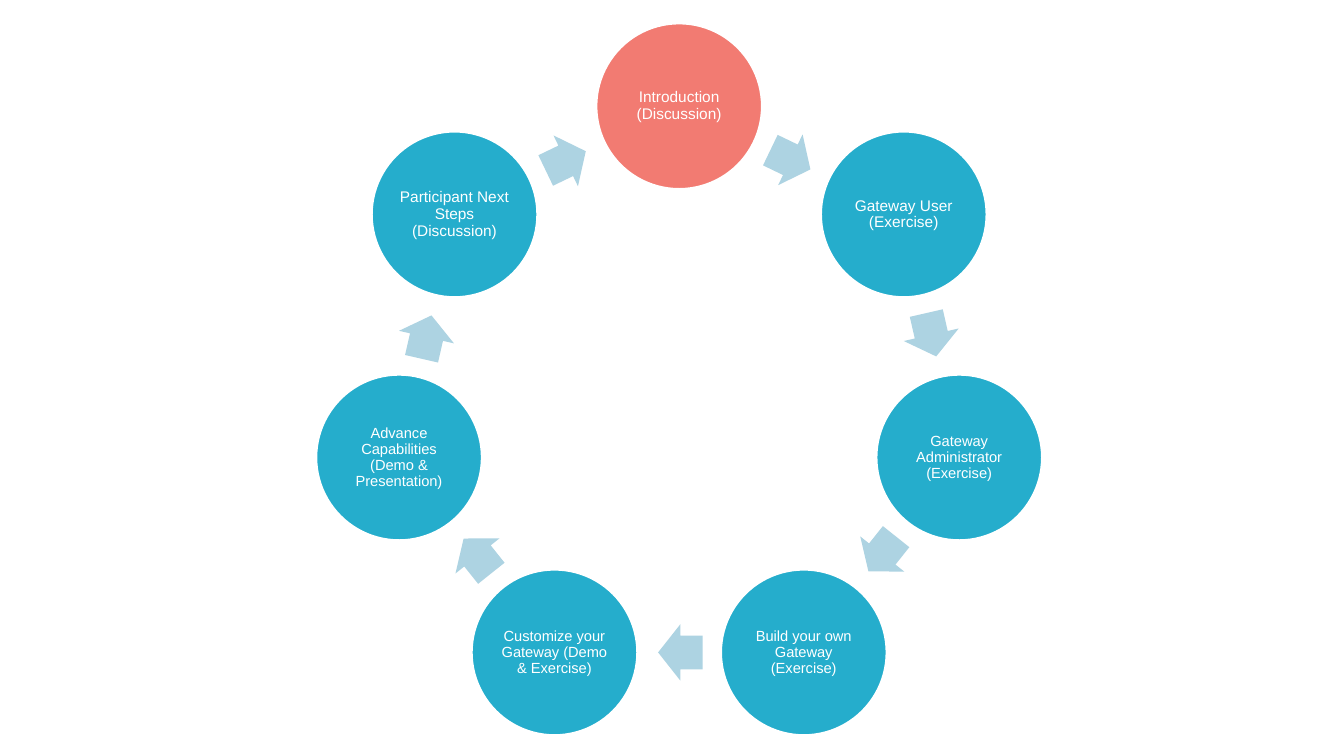
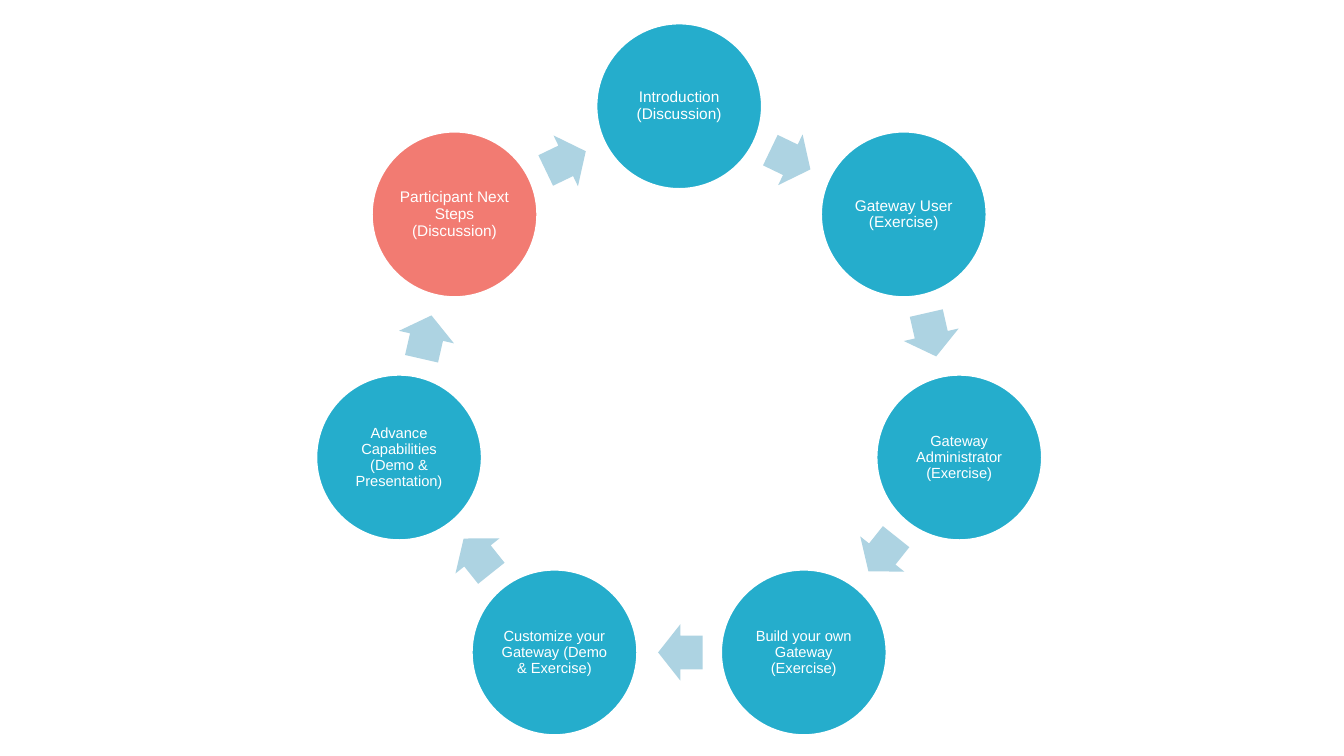
import math

from pptx import Presentation
from pptx import util as u
from pptx.dml.color import RGBColor
from pptx.enum import shapes, text

COLORS = {
    "current": "F27B72",
    "step": "25ADCC",
    "arrow": "ADD3E2",
    "white": "FFFFFF",
}
FONT = "Arial"
STEPS = [
    ("Introduction (Discussion)", 11),
    ("Gateway User (Exercise)", 11),
    ("Gateway Administrator (Exercise)", 10.5),
    ("Build your own Gateway (Exercise)", 10.5),
    ("Customize your Gateway (Demo & Exercise)", 10.5),
    ("Advance Capabilities (Demo & Presentation)", 10.5),
    ("Participant Next Steps (Discussion)", 11),
]
CYCLE_BOX = (7.96, 0.58, 18.31)  # left, top, width in cm
CIRCLE_SHARE = 0.229  # circle diameter as a share of the cycle's width
ARROW_SIZE = (1.12, 1.42)
ARROW_SETBACK = 0.03


def color(name):
    return RGBColor.from_string(COLORS[name])


def add_centered_shape(container, kind, center, size, fill):
    (x, y), (width, height) = center, size
    shape = container.shapes.add_shape(
        kind, u.Cm(x - width / 2), u.Cm(y - height / 2), u.Cm(width), u.Cm(height))
    shape.shadow.inherit = False
    shape.fill.solid()
    shape.fill.fore_color.rgb = color(fill)
    return shape


def add_step(container, center, diameter, label, size, fill):
    circle = add_centered_shape(
        container, shapes.MSO_SHAPE.OVAL, center, (diameter, diameter), fill)
    circle.line.color.rgb = color("white")
    circle.line.width = u.Pt(2)
    frame = circle.text_frame
    frame.word_wrap = True
    frame.vertical_anchor = text.MSO_ANCHOR.MIDDLE
    frame.margin_left = frame.margin_right = u.Cm(0.05)
    frame.margin_top = frame.margin_bottom = u.Cm(0.05)
    paragraph = frame.paragraphs[0]
    paragraph.alignment = text.PP_ALIGN.CENTER
    paragraph.line_spacing = 0.9
    run = paragraph.add_run()
    run.text = label
    run.font.name = FONT
    run.font.size = u.Pt(size)
    run.font.color.rgb = color("white")


def add_arrow(container, start, end):
    """Place an arrow halfway between two circle centers, set back slightly."""
    angle = math.atan2(end[1] - start[1], end[0] - start[0])
    center = ((start[0] + end[0]) / 2 - ARROW_SETBACK * math.cos(angle),
              (start[1] + end[1]) / 2 - ARROW_SETBACK * math.sin(angle))
    arrow = add_centered_shape(
        container, shapes.MSO_SHAPE.RIGHT_ARROW, center, ARROW_SIZE, "arrow")
    arrow.line.fill.background()
    arrow.adjustments[0] = 0.6
    arrow.adjustments[1] = 0.5
    arrow.rotation = math.degrees(angle) % 360


def add_cycle(slide, box, current):
    """Draw the steps clockwise from the top, with one step highlighted."""
    left, top, width = box
    diameter = width * CIRCLE_SHARE
    angles = [2 * math.pi * index / len(STEPS) for index in range(len(STEPS))]
    radius = (width - diameter) / 2 / max(math.sin(angle) for angle in angles)
    middle_x, middle_y = left + width / 2, top + diameter / 2 + radius
    centers = [(middle_x + radius * math.sin(angle),
                middle_y - radius * math.cos(angle)) for angle in angles]
    group = slide.shapes.add_group_shape()
    for index, (label, size) in enumerate(STEPS):
        fill = "current" if index == current else "step"
        add_step(group, centers[index], diameter, label, size, fill)
        add_arrow(group, centers[index], centers[(index + 1) % len(STEPS)])


def main():
    presentation = Presentation()
    presentation.slide_width = u.Cm(33.87)
    presentation.slide_height = u.Cm(19.05)
    for current in (0, len(STEPS) - 1):
        slide = presentation.slides.add_slide(presentation.slide_layouts[6])
        add_cycle(slide, CYCLE_BOX, current)
    presentation.save("out.pptx")


if __name__ == "__main__":
    main()
